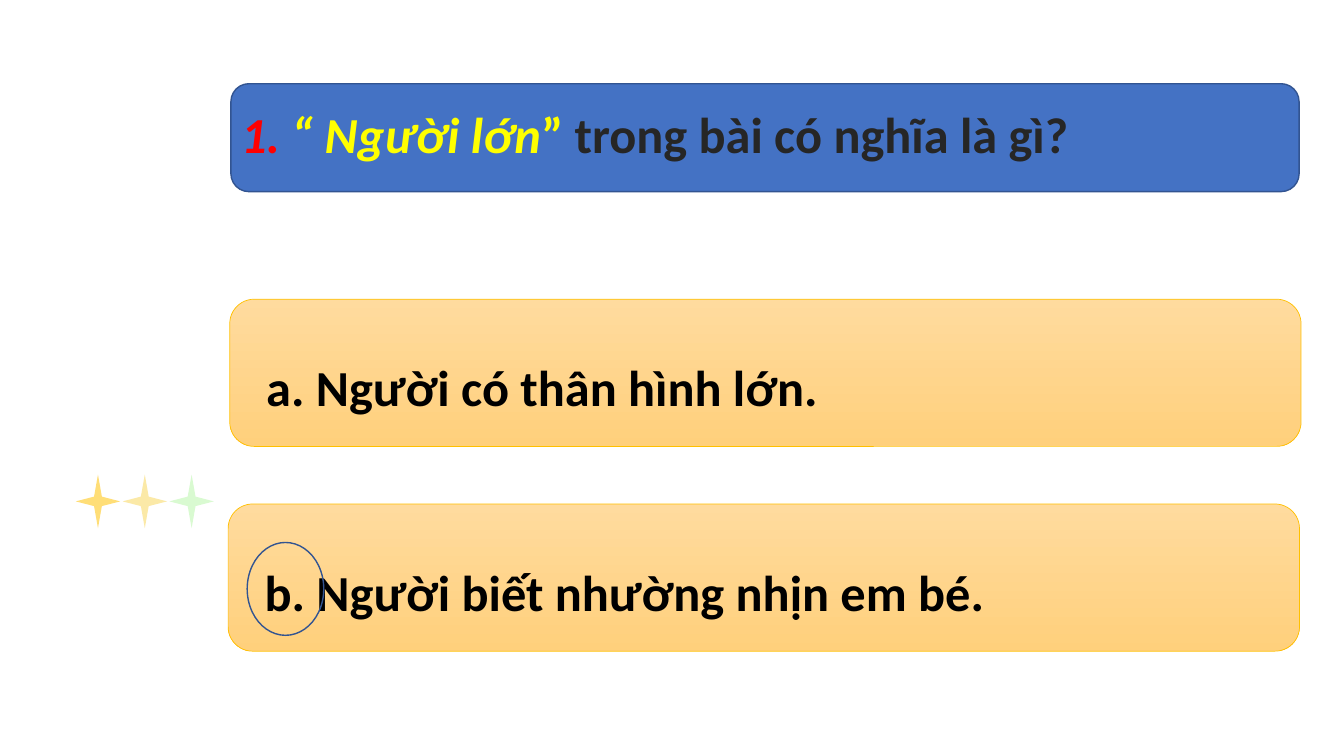
from pptx import Presentation
from pptx import util as u
from pptx.dml.color import RGBColor
from pptx.enum import shapes, text

TITLE_ONLY = 5
SHAPE = shapes.MSO_SHAPE
OUTLINE = "325491"


def colour(value):
    return RGBColor.from_string(value)


def add_figure(page, kind, box, fill=None, line=None, width=1):
    """Add a preset shape; fill is None, one colour, or a (top, bottom) gradient."""
    figure = page.shapes.add_shape(kind, *map(u.Cm, box))
    figure.shadow.inherit = False
    if fill is None:
        figure.fill.background()
    elif isinstance(fill, str):
        figure.fill.solid()
        figure.fill.fore_color.rgb = colour(fill)
    else:
        figure.fill.gradient()
        figure.fill.gradient_angle = 270
        for stop, value in zip(figure.fill.gradient_stops, fill):
            stop.color.rgb = colour(value)
    if line:
        figure.line.color.rgb = colour(line)
        figure.line.width = u.Pt(width)
    else:
        figure.line.fill.background()
    return figure


def write(holder, box, spans, spacing=1.0):
    """Place the holder and fill it with (wording, colour, italic) spans."""
    for name, length in zip(("left", "top", "width", "height"), box):
        setattr(holder, name, u.Cm(length))
    frame = holder.text_frame
    frame_format = {
        "word_wrap": True,
        "auto_size": text.MSO_AUTO_SIZE.SHAPE_TO_FIT_TEXT,
        "vertical_anchor": text.MSO_ANCHOR.TOP,
    }
    for name, value in frame_format.items():
        setattr(frame, name, value)
    para = frame.paragraphs[0]
    para.alignment = text.PP_ALIGN.LEFT
    para.line_spacing = spacing
    for wording, value, italic in spans:
        span = para.add_run()
        span.text = wording
        font_format = {"name": "Calibri", "size": u.Pt(36), "bold": True, "italic": italic}
        for name, setting in font_format.items():
            setattr(span.font, name, setting)
        span.font.color.rgb = colour(value)


def add_stars(page, left, top, width, height, step):
    for index, fill in enumerate(("FFDE77", "FBE9A7", "D9FAD1")):
        add_figure(page, SHAPE.STAR_4_POINT, (left + index * step, top, width, height), fill)


def add_question(page, left, top, width, height):
    add_figure(page, SHAPE.ROUNDED_RECTANGLE, (left, top, width, height), "4472C4", OUTLINE)
    title = page.shapes.title
    page.shapes.element.append(title.element)  # bring the title in front of its panel
    write(title, (left, top + 0.35, width, 1.8), [
        ("1.", "FF0000", True),
        (" “ Người lớn", "FFFF00", True),
        ("”", "FFFF00", False),
        (" trong bài có nghĩa là gì?", "262626", False),
    ])


def add_answer(page, left, top, width, height, wording):
    add_figure(page, SHAPE.ROUNDED_RECTANGLE, (left, top, width, height),
               ("FFDB9E", "FFD07C"), "FFC000", 0.5)
    holder = page.shapes.add_textbox(0, 0, 0, 0)
    write(holder, (left + 0.67, top + 0.55, 24.54, 2.26), [(wording, "000000", False)], 1.5)


def circle_letter(page, left, top):
    """Ring the letter of the answer whose panel starts at left, top."""
    add_figure(page, SHAPE.OVAL, (left + 0.48, top + 0.97, 1.93, 2.34), line=OUTLINE)


def main():
    deck = Presentation()
    deck.slide_width, deck.slide_height = u.Cm(33.87), u.Cm(19.05)
    page = deck.slides.add_slide(deck.slide_layouts[TITLE_ONLY])
    add_stars(page, 1.91, 11.96, 1.12, 1.35, step=1.18)
    add_question(page, 5.82, 2.11, 26.92, 2.72)
    add_answer(page, 5.79, 7.54, 27, 3.71, "a. Người có thân hình lớn.")
    add_answer(page, 5.75, 12.7, 27, 3.71, "b. Người biết nhường nhịn em bé.")
    circle_letter(page, 5.75, 12.7)
    deck.save("out.pptx")


if __name__ == "__main__":
    main()
